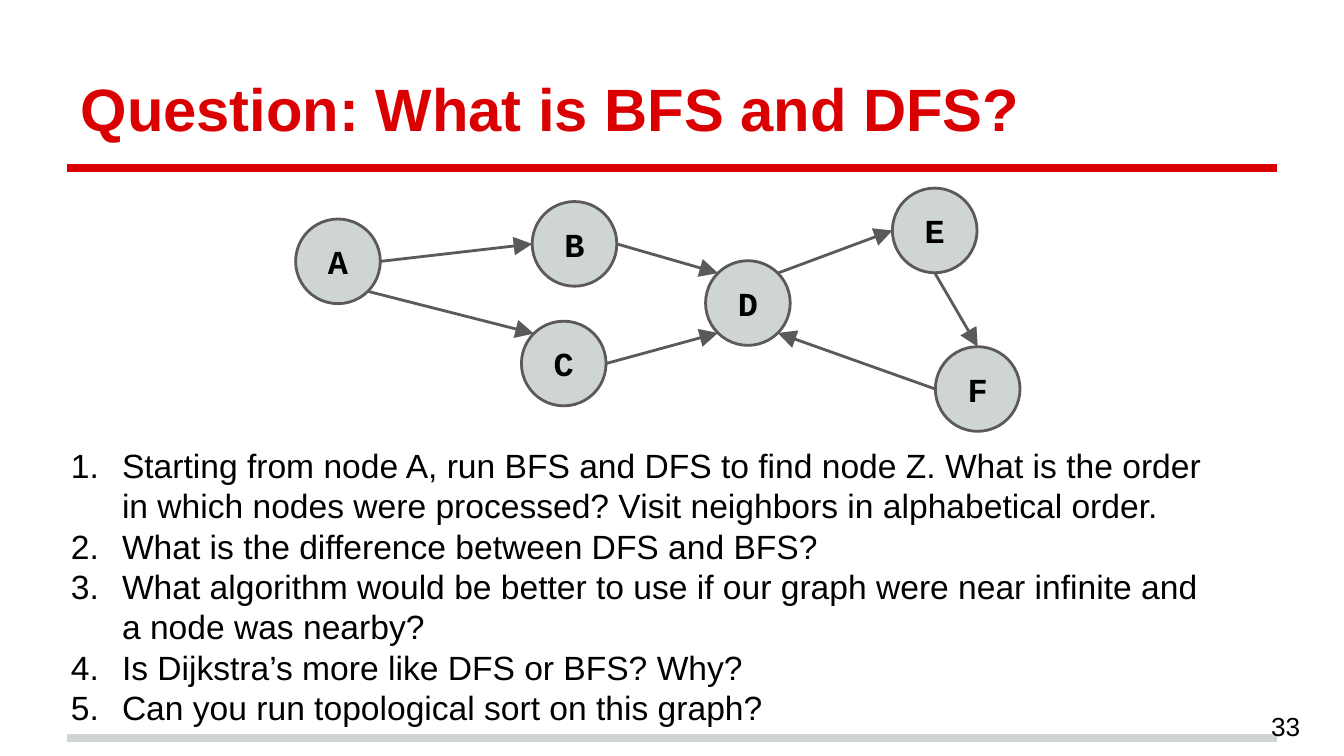
from math import cos, radians, sin

from lxml import etree
from pptx import Presentation
from pptx.dml.color import RGBColor
from pptx.enum import shapes, text
from pptx.oxml import ns
from pptx.util import Inches, Pt

TITLE = "Question: What is BFS and DFS?"
PAGE = "33"
TASKS = [
    "Starting from node A, run BFS and DFS to find node Z. What is the order "
    "in which nodes were processed? Visit neighbors in alphabetical order.",
    "What is the difference between DFS and BFS?",
    "What algorithm would be better to use if our graph were near infinite "
    "and a node was nearby?",
    "Is Dijkstra’s more like DFS or BFS? Why?",
    "Can you run topological sort on this graph?",
]
# Left and top of each node, in inches
NODES = {
    "A": (2.2, 1.63), "B": (3.96, 1.5), "C": (3.88, 2.39),
    "D": (5.25, 1.94), "E": (6.64, 1.4), "F": (6.96, 2.58),
}
# Each end is a node and an angle on its rim: 0 is right, 90 is down
EDGES = [
    ("A", 0, "B", 180), ("A", 45, "C", 225),
    ("B", 0, "D", 225), ("C", 0, "D", 135),
    ("D", 315, "E", 180), ("E", 90, "F", 270), ("F", 180, "D", 45),
]
SIZE = 0.63
RED = RGBColor(0xDA, 0x00, 0x02)
PALE = RGBColor(0xCF, 0xD4, 0xD4)
GRAY = RGBColor(0x5B, 0x59, 0x5A)
BLACK = RGBColor(0, 0, 0)

deck = Presentation()
deck.slide_width = Inches(10)
deck.slide_height = Inches(10) * 9 // 16
slide = deck.slides.add_slide(deck.slide_layouts[5])


def set_font(para, size, color=BLACK, bold=False, name="Arial"):
    font = para.font
    font.name, font.size, font.bold = name, Pt(size), bold
    font.color.rgb = color


def set_frame(frame, anchor):
    frame.word_wrap = True
    frame.auto_size = text.MSO_AUTO_SIZE.NONE
    frame.vertical_anchor = anchor
    frame.margin_left = frame.margin_right = Inches(0.1)
    frame.margin_top = frame.margin_bottom = Inches(0.1)


def add_line(start, end, color, width, arrow=False):
    line = slide.shapes.add_connector(
        shapes.MSO_CONNECTOR.STRAIGHT, *map(Inches, start + end))
    line.line.color.rgb = color
    line.line.width = Pt(width)
    if arrow:
        etree.SubElement(line._element.spPr.find(ns.qn("a:ln")),
                         ns.qn("a:tailEnd"),
                         type="triangle", w="lg", len="lg")
    etree.SubElement(line._element.spPr, ns.qn("a:effectLst"))


def add_text(box, anchor):
    frame = slide.shapes.add_textbox(*map(Inches, box)).text_frame
    set_frame(frame, anchor)
    return frame


def add_node(name, left, top):
    node = slide.shapes.add_shape(
        shapes.MSO_SHAPE.OVAL, *map(Inches, (left, top, SIZE, SIZE)))
    node.shadow.inherit = False
    node.fill.solid()
    node.fill.fore_color.rgb = PALE
    node.line.color.rgb = GRAY
    node.line.width = Pt(1.5)
    set_frame(node.text_frame, text.MSO_ANCHOR.MIDDLE)
    para = node.text_frame.paragraphs[0]
    para.text = name
    para.alignment = text.PP_ALIGN.CENTER
    set_font(para, 18, bold=True, name="Courier New")


def rim(name, angle):
    """Point on a node's edge at an angle in degrees."""
    left, top = NODES[name]
    half, turn = SIZE / 2, radians(angle)
    return left + half * (1 + cos(turn)), top + half * (1 + sin(turn))


for y, color in ((5.49, PALE), (1.25, RED)):
    add_line((0.5, y), (9.5, y), color, 4)

title = slide.shapes.title
title.left, title.top, title.width, title.height = map(
    Inches, (0.5, 0.23, 9, 0.94))
set_frame(title.text_frame, text.MSO_ANCHOR.BOTTOM)
para = title.text_frame.paragraphs[0]
para.text = TITLE
para.alignment = text.PP_ALIGN.LEFT
set_font(para, 32, RED, bold=True)

for name, spot in NODES.items():
    add_node(name, *spot)
for tail, out, head, into in EDGES:
    add_line(rim(tail, out), rim(head, into), GRAY, 1.5, arrow=True)

frame = add_text((0.31, 3.21, 8.86, 2.15), text.MSO_ANCHOR.TOP)
for i, task in enumerate(TASKS):
    para = frame.add_paragraph() if i else frame.paragraphs[0]
    para.text = task
    set_font(para, 18)
    props = para._p.get_or_add_pPr()
    props.set("marL", str(Inches(0.5)))
    props.set("indent", str(Inches(-0.38)))
    mark = etree.Element(ns.qn("a:buAutoNum"), type="arabicPeriod")
    props.find(ns.qn("a:defRPr")).addprevious(mark)

para = add_text((9.36, 5.19, 0.6, 0.43), text.MSO_ANCHOR.MIDDLE).paragraphs[0]
para.text = PAGE
set_font(para, 14)

deck.save("out.pptx")
